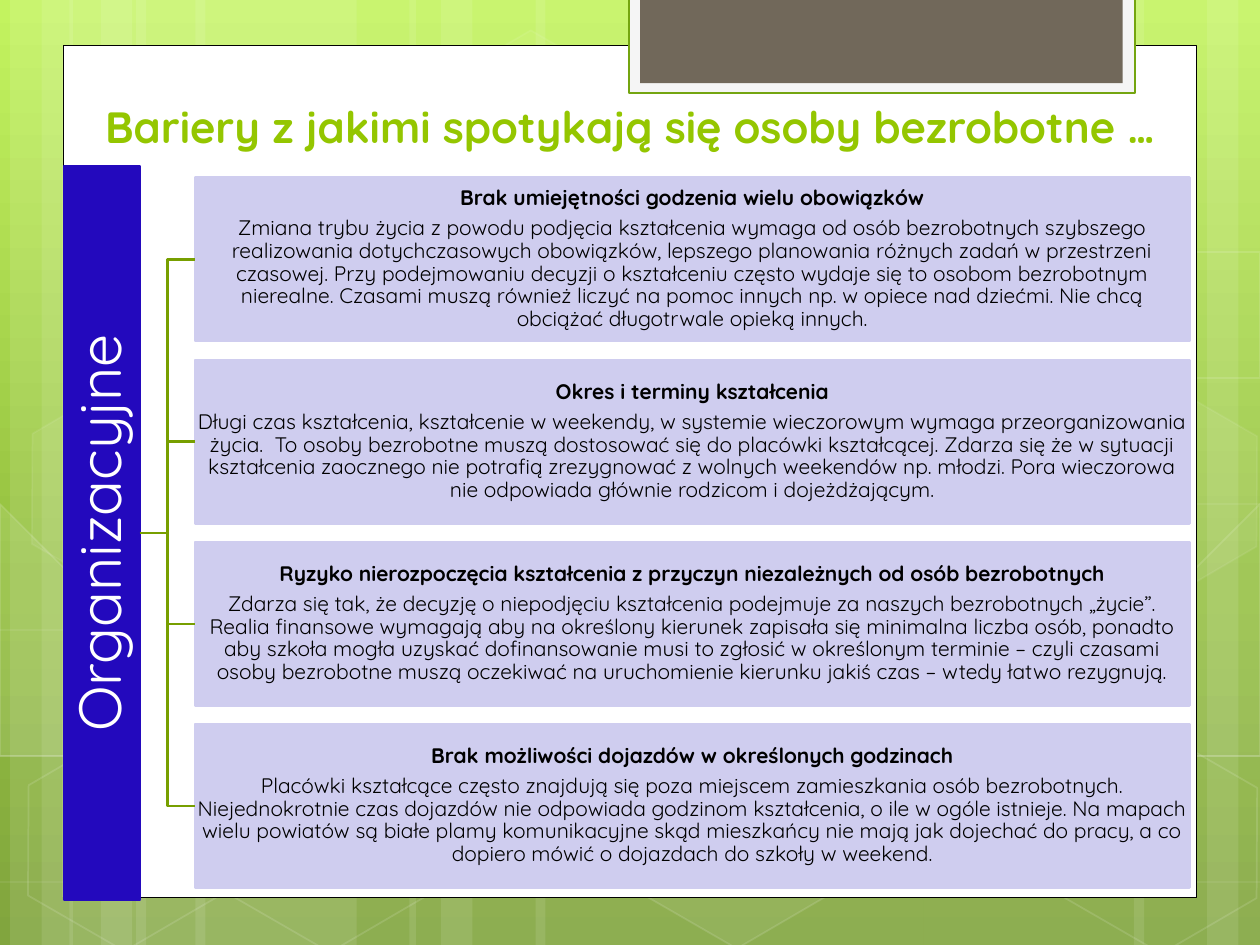
import copy

import lxml.etree
import pptx
import pptx.dml.color
import pptx.enum.shapes
import pptx.enum.text
import pptx.oxml.ns
import pptx.util

Inches, Pt = pptx.util.Inches, pptx.util.Pt
RGBColor = pptx.dml.color.RGBColor
Shape = pptx.enum.shapes.MSO_SHAPE
qn = pptx.oxml.ns.qn

FONT = "Quicksand"
WIDTH, HEIGHT = 10, 7.5
WHITE = RGBColor(0xFF, 0xFF, 0xFF)
BLACK = RGBColor(0, 0, 0)
TITLE_GREEN = RGBColor(0x94, 0xC6, 0x00)
TAB_GREEN = RGBColor(0x74, 0xA5, 0x10)
BRACKET_GREEN = RGBColor(0x77, 0x9F, 0x00)
TAB_LIGHT = RGBColor(0xF5, 0xF5, 0xF5)
TAB_BROWN = RGBColor(0x71, 0x68, 0x5A)
NAVY = RGBColor(0x23, 0x09, 0xBD)
LAVENDER = RGBColor(0xCF, 0xCD, 0xEF)
BACKGROUND = [(0, RGBColor(0xC3, 0xF3, 0x5F)), (0.62, RGBColor(0x93, 0xBF, 0x3F)),
              (1, RGBColor(0x81, 0xA5, 0x3E))]

# left, width
BANDS = [(1.08, 1.75), (0.08, 0.5), (0.33, 0.83), (1.55, 1.75), (0.55, 0.5), (0.8, 0.83),
         (7.33, 1.75), (9.58, 0.5), (9, 0.83), (4.25, 3.08), (3.25, 0.5), (3.5, 0.83)]
# start point, then three control points for each Bézier segment
CURVES = [
    [(0.07, 6.73), (0.61, 6.76), (1.15, 6.79), (1.9, 6.78), (2.65, 6.77), (3.58, 6.75), (4.58, 6.65),
     (5.58, 6.55), (7, 6.36), (7.92, 6.17), (8.83, 5.98), (9.77, 5.68), (10.07, 5.51)],
    [(0.07, 4.77), (0.36, 4.61), (0.65, 4.46), (1.21, 4.31), (1.78, 4.16), (2.59, 3.94), (3.47, 3.87),
     (4.36, 3.8), (5.44, 3.79), (6.54, 3.87), (7.64, 3.95), (9.47, 4.26), (10.07, 4.34)],
    [(0.06, 6.17), (1.27, 6.72), (2.47, 7.27), (3.34, 7.49)],
    [(0.07, 5.78), (0.38, 5.89), (0.7, 6), (1.28, 6.16), (1.86, 6.31), (2.73, 6.56), (3.57, 6.73),
     (4.4, 6.9), (5.45, 7.08), (6.28, 7.18), (7.11, 7.29), (8, 7.33), (8.53, 7.36),
     (9.05, 7.4), (9.19, 7.38), (9.45, 7.38), (9.71, 7.37), (9.89, 7.35), (10.07, 7.34)],
    [(2.42, 7.49), (2.6, 7.29), (2.78, 7.09), (3.02, 6.91), (3.26, 6.73), (3.6, 6.53), (3.88, 6.39),
     (4.16, 6.25), (4.33, 6.19), (4.7, 6.09), (5.06, 5.99), (5.73, 5.85), (6.08, 5.78),
     (6.44, 5.71), (6.49, 5.71), (6.8, 5.69), (7.11, 5.66), (7.6, 5.63), (7.94, 5.62),
     (8.29, 5.61), (8.86, 5.62), (8.86, 5.62), (9, 5.62), (9.3, 5.62), (9.53, 5.62),
     (9.71, 5.63), (9.88, 5.64), (10.06, 5.66)],
]
# left, top, fill opacity (None: no fill), line opacity
HEXAGONS = [(3.34, 0.36, 4, 8), (4.97, 5.89, 6, 12), (0.11, 5.91, None, 12), (0.14, 3.12, 7, 8),
            (1.74, 5.92, None, 12), (7.53, 4.53, 10, 12), (8.34, 5.93, None, 12), (8.34, 3.14, 7, 8)]
# corner points, fill opacity
CUT_HEXAGONS = [
    ([(0.08, 4.45), (0.19, 4.38), (0.96, 4.82), (0.95, 5.7), (0.2, 6.14), (0.08, 6.07)], 10),
    ([(9.26, 4.85), (10.01, 4.41), (10.09, 4.46), (10.09, 6.13), (10.02, 6.17), (9.26, 5.73)], 4),
    ([(9.26, 2.07), (10.01, 1.63), (10.1, 1.68), (10.09, 3.35), (10.02, 3.39), (9.26, 2.95)], None),
]
BARRIERS = [
    ("Brak umiejętności godzenia wielu obowiązków",
     "Zmiana trybu życia z powodu podjęcia kształcenia wymaga od osób bezrobotnych szybszego realizowania dotychczasowych obowiązków, lepszego planowania różnych zadań w przestrzeni czasowej. Przy podejmowaniu decyzji o kształceniu często wydaje się to osobom bezrobotnym nierealne. Czasami muszą również liczyć na pomoc innych np. w opiece nad dziećmi. Nie chcą obciążać długotrwale opieką innych."),
    ("Okres i terminy kształcenia",
     "Długi czas kształcenia, kształcenie w weekendy, w systemie wieczorowym wymaga przeorganizowania życia.  To osoby bezrobotne muszą dostosować się do placówki kształcącej. Zdarza się że w sytuacji kształcenia zaocznego nie potrafią zrezygnować z wolnych weekendów np. młodzi. Pora wieczorowa nie odpowiada głównie rodzicom i dojeżdżającym."),
    ("Ryzyko nierozpoczęcia kształcenia z przyczyn niezależnych od osób bezrobotnych",
     "Zdarza się tak, że decyzję o niepodjęciu kształcenia podejmuje za naszych bezrobotnych „życie”. Realia finansowe wymagają aby na określony kierunek zapisała się minimalna liczba osób, ponadto aby szkoła mogła uzyskać dofinansowanie musi to zgłosić w określonym terminie – czyli czasami osoby bezrobotne muszą oczekiwać na uruchomienie kierunku jakiś czas – wtedy łatwo rezygnują."),
    ("Brak możliwości dojazdów w określonych godzinach",
     "Placówki kształcące często znajdują się poza miejscem zamieszkania osób bezrobotnych. Niejednokrotnie czas dojazdów nie odpowiada godzinom kształcenia, o ile w ogóle istnieje. Na mapach wielu powiatów są białe plamy komunikacyjne skąd mieszkańcy nie mają jak dojechać do pracy, a co dopiero mówić o dojazdach do szkoły w weekend."),
]
ROW_TOP, ROW_PITCH, ROW_HEIGHT = 1.41, 1.445, 1.3


def set_opacity(fill, percent):
    color = fill.fore_color._xFill.find(qn("a:srgbClr"))
    lxml.etree.SubElement(color, qn("a:alpha")).set("val", str(percent * 1000))


def style_shape(shape, fill=None, line=None, line_width=1.25, fill_opacity=100, line_opacity=100):
    shape.shadow.inherit = False
    for target, color, opacity in ((shape.fill, fill, fill_opacity),
                                   (shape.line.fill, line, line_opacity)):
        if color is None:
            target.background()
            continue
        target.solid()
        target.fore_color.rgb = color
        if opacity < 100:
            set_opacity(target, opacity)
    if line is not None:
        shape.line.width = Pt(line_width)


def add_box(slide, left, top, width, height, kind=Shape.RECTANGLE, **style):
    shape = slide.shapes.add_shape(kind, Inches(left), Inches(top), Inches(width), Inches(height))
    style_shape(shape, **style)
    return shape


def add_outline(slide, points, close, **style):
    builder = slide.shapes.build_freeform(*points[0], scale=Inches(1))
    builder.add_line_segments(points[1:], close=close)
    style_shape(builder.convert_to_shape(), **style)


def curve_points(controls, steps=8):
    """Return points along a chain of cubic Bézier segments."""
    points = [controls[0]]
    for start in range(0, len(controls) - 1, 3):
        segment = controls[start:start + 4]
        for step in range(1, steps + 1):
            t = step / steps
            weights = ((1 - t) ** 3, 3 * t * (1 - t) ** 2, 3 * t * t * (1 - t), t ** 3)
            points.append(tuple(sum(w * p[axis] for w, p in zip(weights, segment)) for axis in (0, 1)))
    return points


def write_paragraph(paragraph, text, size, color, bold=False):
    paragraph.alignment = pptx.enum.text.PP_ALIGN.CENTER
    run = paragraph.add_run()
    run.text = text
    run.font.name = FONT
    run.font.size = Pt(size)
    run.font.bold = bold
    run.font.color.rgb = color


def prepare_text(frame, margin, anchor=pptx.enum.text.MSO_ANCHOR.MIDDLE):
    frame.word_wrap = True
    frame.vertical_anchor = anchor
    frame.margin_left = frame.margin_right = frame.margin_top = frame.margin_bottom = Inches(margin)


def paint_background(slide):
    fill = slide.background.fill
    fill.gradient()
    fill.gradient_angle = 270
    last_stop = fill.gradient_stops[1]._gs
    last_stop.addnext(copy.deepcopy(last_stop))
    for stop, (position, color) in zip(fill.gradient_stops, BACKGROUND):
        stop.position = position
        stop.color.rgb = color


def add_decoration(slide):
    for left, width in BANDS:
        add_box(slide, left, 0, width, HEIGHT, fill=WHITE, fill_opacity=10)
    for controls in CURVES:
        add_outline(slide, curve_points(controls), False, line=WHITE, line_width=0.5, line_opacity=20)
    for left, top, opacity, line_opacity in HEXAGONS:
        hexagon = add_box(slide, left, top, 1.75, 1.52, Shape.HEXAGON, fill=WHITE if opacity else None,
                          fill_opacity=opacity, line=WHITE, line_width=1, line_opacity=line_opacity)
        hexagon.rotation = 30
        hexagon.adjustments[0] = 0.285
    for points, opacity in CUT_HEXAGONS:
        add_outline(slide, points, True, fill=WHITE if opacity else None, fill_opacity=opacity,
                    line=WHITE, line_width=1, line_opacity=12)


def add_title(slide, text):
    title = slide.shapes.title
    slide.shapes._spTree.append(title._element)  # bring in front of the card
    title.left, title.top, title.width, title.height = map(Inches, (0.59, 0.6, 8.82, 0.66))
    prepare_text(title.text_frame, 0.05, pptx.enum.text.MSO_ANCHOR.BOTTOM)
    write_paragraph(title.text_frame.paragraphs[0], text, 25, TITLE_GREEN, bold=True)


def add_category(slide, text):
    """Add the upright bar that names the group of barriers."""
    bar = add_box(slide, 0.51, 1.32, 0.6, 5.82, fill=NAVY, line=NAVY)
    prepare_text(bar.text_frame, 0.02)
    bar.text_frame._txBody.bodyPr.set("vert", "vert270")
    paragraph = bar.text_frame.paragraphs[0]
    paragraph.line_spacing = 0.9
    write_paragraph(paragraph, text, 34, WHITE)
    return bar


def add_barrier(slide, row, heading, body):
    box = add_box(slide, 1.55, ROW_TOP + row * ROW_PITCH, 7.89, ROW_HEIGHT, fill=LAVENDER, line=LAVENDER)
    frame = box.text_frame
    prepare_text(frame, 0.01)
    for paragraph, text, bold in ((frame.paragraphs[0], heading, True),
                                  (frame.add_paragraph(), body, False)):
        paragraph.line_spacing = 0.9
        paragraph.space_after = Pt(4.2)
        write_paragraph(paragraph, text, 12, BLACK, bold)
    return box


def join(slide, bar, box):
    connector = slide.shapes.add_connector(pptx.enum.shapes.MSO_CONNECTOR.ELBOW, 0, 0, 0, 0)
    connector.begin_connect(bar, 3)
    connector.end_connect(box, 1)
    connector.line.color.rgb = BRACKET_GREEN
    connector.line.width = Pt(1.25)
    lxml.etree.SubElement(connector._element.spPr, qn("a:effectLst"))


def main():
    presentation = pptx.Presentation()
    presentation.slide_width, presentation.slide_height = Inches(WIDTH), Inches(HEIGHT)
    slide = presentation.slides.add_slide(presentation.slide_layouts[5])
    paint_background(slide)
    add_decoration(slide)
    add_box(slide, 0.5, 0.36, 9, 6.76, fill=WHITE, line=BLACK, line_width=0.5)
    add_box(slide, 4.99, -0.02, 4.02, 0.76, fill=TAB_LIGHT, line=TAB_GREEN)
    add_box(slide, 5.08, -0.02, 3.83, 0.68, fill=TAB_BROWN)
    add_title(slide, "Bariery z jakimi spotykają się osoby bezrobotne …")
    bar = add_category(slide, "Organizacyjne")
    for row, (heading, body) in enumerate(BARRIERS):
        join(slide, bar, add_barrier(slide, row, heading, body))
    presentation.save("out.pptx")


if __name__ == "__main__":
    main()
